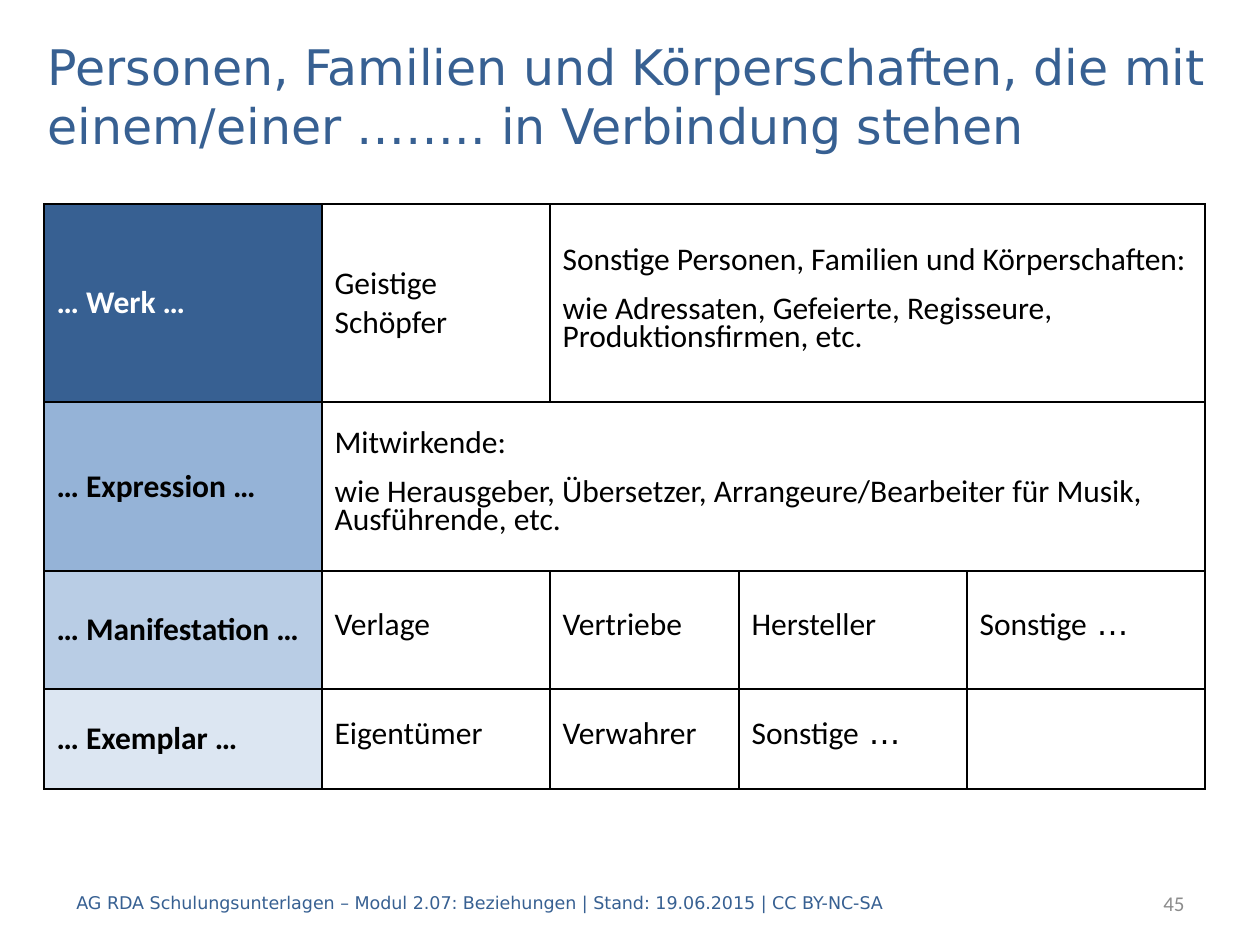
from lxml.etree import SubElement
from pptx import Presentation
from pptx.dml.color import RGBColor
from pptx.enum.text import MSO_ANCHOR as Anchor, MSO_AUTO_SIZE as AutoSize, PP_ALIGN as Align
from pptx.oxml.ns import qn
from pptx.util import Emu, Pt

SCALE = 914400 / 126
COLORS = {
    "blue": "376092", "mid": "95B3D7", "light": "B9CDE5", "pale": "DCE6F2",
    "white": "FFFFFF", "black": "000000", "gray": "8C8C8C",
}
BODY, SANS = "Calibri", "DejaVu Sans"


def px(*values):
    return [Emu(round(value * SCALE)) for value in values]


def add_run(paragraph, text, size, font, color, bold=False):
    run = paragraph.add_run()
    run.text = text
    run.font.size = Pt(size)
    run.font.name = font
    run.font.bold = bold
    run.font.color.rgb = RGBColor.from_string(COLORS[color])


presentation = Presentation()
presentation.slide_width, presentation.slide_height = px(1260, 945)
slide = presentation.slides.add_slide(presentation.slide_layouts[5])

column_widths = [278, 228, 189, 228, 238]
row_heights = [198, 169, 118, 100]
other = ["Sonstige", " …"]
rows = [
    ("… Werk …", "blue", "white", [
        [["Geistige Schöpfer"]],
        [["Sonstige Personen, Familien und Körperschaften:"],
         ["wie Adressaten, Gefeierte, Regisseure, Produktionsfirmen, etc."]],
    ]),
    ("… Expression …", "mid", "black", [
        [["Mitwirkende:"],
         ["wie Herausgeber, Übersetzer, Arrangeure/Bearbeiter für Musik, Ausführende, etc."]],
    ]),
    ("… Manifestation …", "light", "black",
     [[["Verlage"]], [["Vertriebe"]], [["Hersteller"]], [other]]),
    ("… Exemplar …", "pale", "black",
     [[["Eigentümer"]], [["Verwahrer"]], [other]]),
]

table_frame = slide.shapes.add_table(
    len(rows), len(column_widths), *px(44, 204, sum(column_widths), sum(row_heights)))
table = table_frame.table
for column, width in zip(table.columns, px(*column_widths)):
    column.width = width
for row, height in zip(table.rows, px(*row_heights)):
    row.height = height

for cell in table.iter_cells():
    properties = cell._tc.get_or_add_tcPr()
    for side in ("lnL", "lnR", "lnT", "lnB"):
        line = SubElement(properties, qn(f"a:{side}"), w=str(Pt(1)))
        fill = SubElement(line, qn("a:solidFill"))
        SubElement(fill, qn("a:srgbClr"), val=COLORS["black"])
    cell.fill.solid()
    cell.fill.fore_color.rgb = RGBColor.from_string(COLORS["white"])
    cell.vertical_anchor = Anchor.MIDDLE

table.cell(0, 2).merge(table.cell(0, 4))
table.cell(1, 1).merge(table.cell(1, 4))

for row_index, (label, fill_color, text_color, entries) in enumerate(rows):
    header = table.cell(row_index, 0)
    header.fill.fore_color.rgb = RGBColor.from_string(COLORS[fill_color])
    add_run(header.text_frame.paragraphs[0], label, 18, BODY, text_color, True)
    for column_index, entry in enumerate(entries, 1):
        frame = table.cell(row_index, column_index).text_frame
        for number, parts in enumerate(entry):
            paragraph = frame.add_paragraph() if number else frame.paragraphs[0]
            if (row_index, column_index) != (0, 1):
                paragraph.line_spacing = Pt(16)
                paragraph.space_before = paragraph.space_after = Pt(6)
            for part, font in zip(parts, (BODY, SANS)):
                add_run(paragraph, part, 18, font, "black")

title = slide.shapes.title
footer = slide.shapes.add_textbox(*px(64, 878, 843, 50))
page_number = slide.shapes.add_textbox(*px(997, 878, 200, 50))
title.left, title.top, title.width, title.height = px(35, 25, 1191, 140)

texts = [
    (title, "Personen, Familien und Körperschaften, die mit einem/einer …….. in Verbindung stehen",
     28, SANS, "blue", Align.LEFT),
    (footer, "AG RDA Schulungsunterlagen – Modul 2.07: Beziehungen | Stand: 19.06.2015 | CC BY-NC-SA",
     10, SANS, "blue", Align.LEFT),
    (page_number, "45", 12, BODY, "gray", Align.RIGHT),
]
for shape, text, size, font, color, alignment in texts:
    frame = shape.text_frame
    frame.word_wrap = True
    frame.auto_size = AutoSize.NONE
    frame.vertical_anchor = Anchor.MIDDLE
    paragraph = frame.paragraphs[0]
    paragraph.alignment = alignment
    add_run(paragraph, text, size, font, color)

presentation.save("out.pptx")
